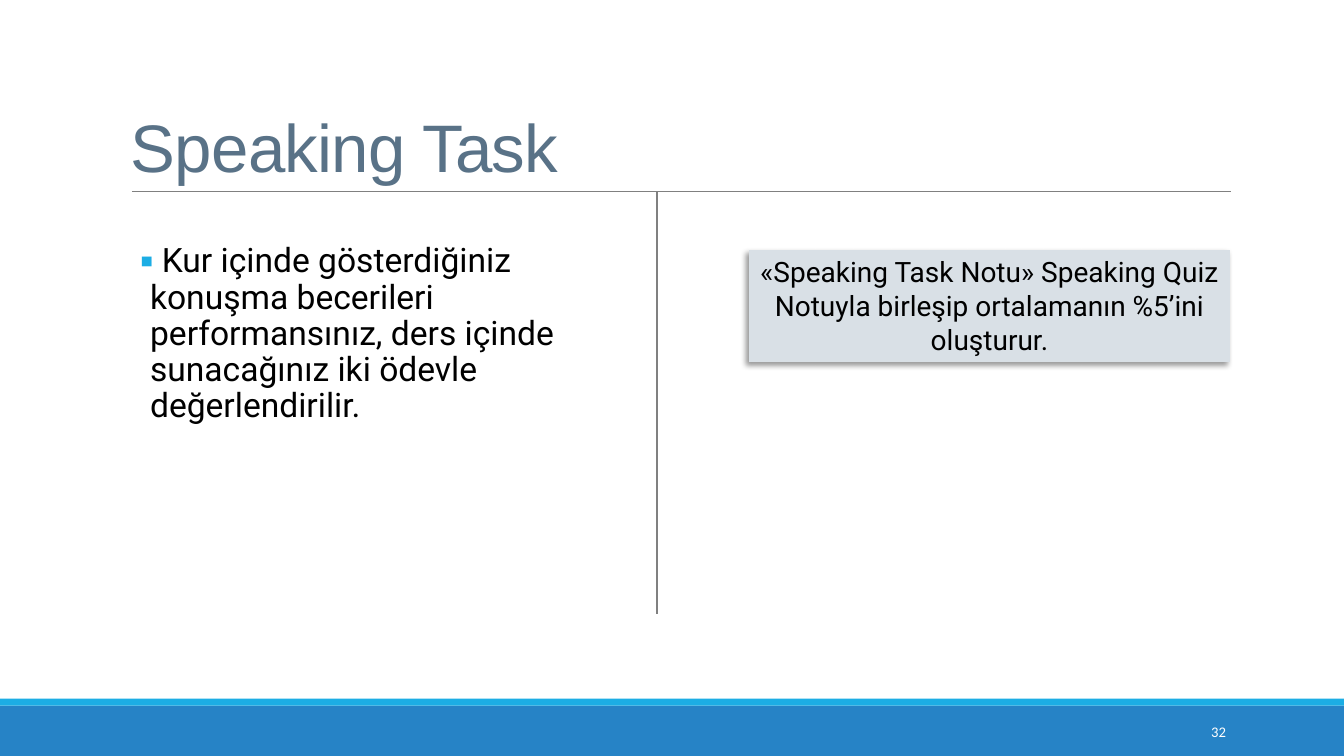
import pptx
import pptx.util
import pptx.dml.color
import pptx.enum.shapes
import pptx.enum.text
import pptx.oxml
import pptx.oxml.ns

Pt = pptx.util.Pt
RGB = pptx.dml.color.RGBColor
ALIGN = pptx.enum.text.PP_ALIGN
ANCHOR = pptx.enum.text.MSO_ANCHOR
RECTANGLE = pptx.enum.shapes.MSO_SHAPE.RECTANGLE

# Content
TITLE = "Speaking Task"
TASK = " Kur içinde gösterdiğiniz konuşma becerileri performansınız, ders içinde sunacağınız iki ödevle değerlendirilir."
GRADE = "«Speaking Task Notu» Speaking Quiz Notuyla birleşip ortalamanın %5’ini oluşturur."
PAGE_NUMBER = "32"

# Colours
BLUE = RGB(0x26, 0x83, 0xC6)
CYAN = RGB(0x1C, 0xAD, 0xE4)
SLATE = RGB(0x59, 0x72, 0x87)
PALE = RGB(0xD9, 0xE0, 0xE6)
GRAY = RGB(0x80, 0x80, 0x80)
BLACK = RGB(0, 0, 0)
WHITE = RGB(0xFF, 0xFF, 0xFF)

# Layout, in points
WIDTH, HEIGHT = 960, 540
FOOTER_HEIGHT, STRIPE_HEIGHT = 36, 5
FOOTER_TOP = HEIGHT - FOOTER_HEIGHT
RULE_LEFT, RULE_RIGHT, RULE_Y = 94.3, 879, 136.8
DIVIDER_X, DIVIDER_BOTTOM = 469.4, 438.5

deck = pptx.Presentation()
deck.slide_width, deck.slide_height = Pt(WIDTH), Pt(HEIGHT)
page = deck.slides.add_slide(deck.slide_layouts[6])


def xml(text):
    return pptx.oxml.parse_xml(text.replace(">", f" {pptx.oxml.ns.nsdecls('a')}>", 1))


def add_bar(left, top, width, height, color):
    bar = page.shapes.add_shape(RECTANGLE, Pt(left), Pt(top), Pt(width), Pt(height))
    bar.shadow.inherit = False
    bar.fill.solid()
    bar.fill.fore_color.rgb = color
    bar.line.fill.background()
    return bar


def add_rule(x1, y1, x2, y2, weight):
    rule = page.shapes.add_connector(
        pptx.enum.shapes.MSO_CONNECTOR.STRAIGHT, Pt(x1), Pt(y1), Pt(x2), Pt(y2))
    rule.line.color.rgb = GRAY
    rule.line.width = Pt(weight)
    rule._element.spPr.append(xml("<a:effectLst></a:effectLst>"))


def add_box(left, top, width, height):
    return page.shapes.add_textbox(Pt(left), Pt(top), Pt(width), Pt(height))


def write(box, text, size, font, color, align=ALIGN.LEFT, anchor=ANCHOR.TOP,
          line_spacing=1.0, side_inset=7.2, tracking=None, bullet=None):
    frame = box.text_frame
    frame.word_wrap = True
    frame.vertical_anchor = anchor
    frame.margin_left = frame.margin_right = Pt(side_inset)
    para = frame.paragraphs[0]
    para.alignment = align
    para.line_spacing = line_spacing
    if bullet:
        properties = para._p.get_or_add_pPr()
        properties.set("marL", str(Pt(7.2)))
        properties.set("indent", str(-Pt(7.2)))
        properties.append(xml(f'<a:buClr><a:srgbClr val="{CYAN}"/></a:buClr>'))
        properties.append(xml(f'<a:buFont typeface="{font}"></a:buFont>'))
        properties.append(xml(f'<a:buChar char="{bullet}"></a:buChar>'))
    span = para.add_run()
    span.text = text
    span.font.size = Pt(size)
    span.font.name = font
    span.font.color.rgb = color
    if tracking is not None:
        span._r.get_or_add_rPr().set("spc", str(round(tracking * 100)))


# Footer bars
add_bar(0, FOOTER_TOP, WIDTH, FOOTER_HEIGHT, BLUE)
add_bar(0, FOOTER_TOP - STRIPE_HEIGHT, WIDTH, STRIPE_HEIGHT, CYAN)

# Title and rules
add_rule(RULE_LEFT, RULE_Y, RULE_RIGHT, RULE_Y, 0.5)
write(add_box(86.4, 22.3, 792, 114.5), TITLE, 48, "Arial", SLATE,
      anchor=ANCHOR.BOTTOM, line_spacing=0.85, tracking=-0.5)
add_rule(DIVIDER_X, RULE_Y, DIVIDER_X, DIVIDER_BOTTOM, 1)

# Grade note with a soft shadow to the lower left
note = add_bar(535, 178.6, 343.6, 80, PALE)
note.shadow.inherit = True
note._element.spPr.append(xml(
    f'<a:effectLst><a:outerShdw blurRad="{Pt(4)}" dist="{Pt(3)}" dir="{135 * 60000}" '
    'algn="tr" rotWithShape="0"><a:srgbClr val="000000"><a:alpha val="40000"/>'
    '</a:srgbClr></a:outerShdw></a:effectLst>'))
write(note, GRADE, 20, "Roboto", BLACK, align=ALIGN.CENTER)

# Task description
write(add_box(100, 170.6, 356.4, 128.9), TASK, 24, "Roboto", BLACK,
      line_spacing=0.9, side_inset=0, bullet="▪")

# Page number
write(add_box(779.8, 508.3, 103, 28.8), PAGE_NUMBER, 10.5, "Calibri", WHITE,
      align=ALIGN.RIGHT, anchor=ANCHOR.MIDDLE)

deck.save("out.pptx")
